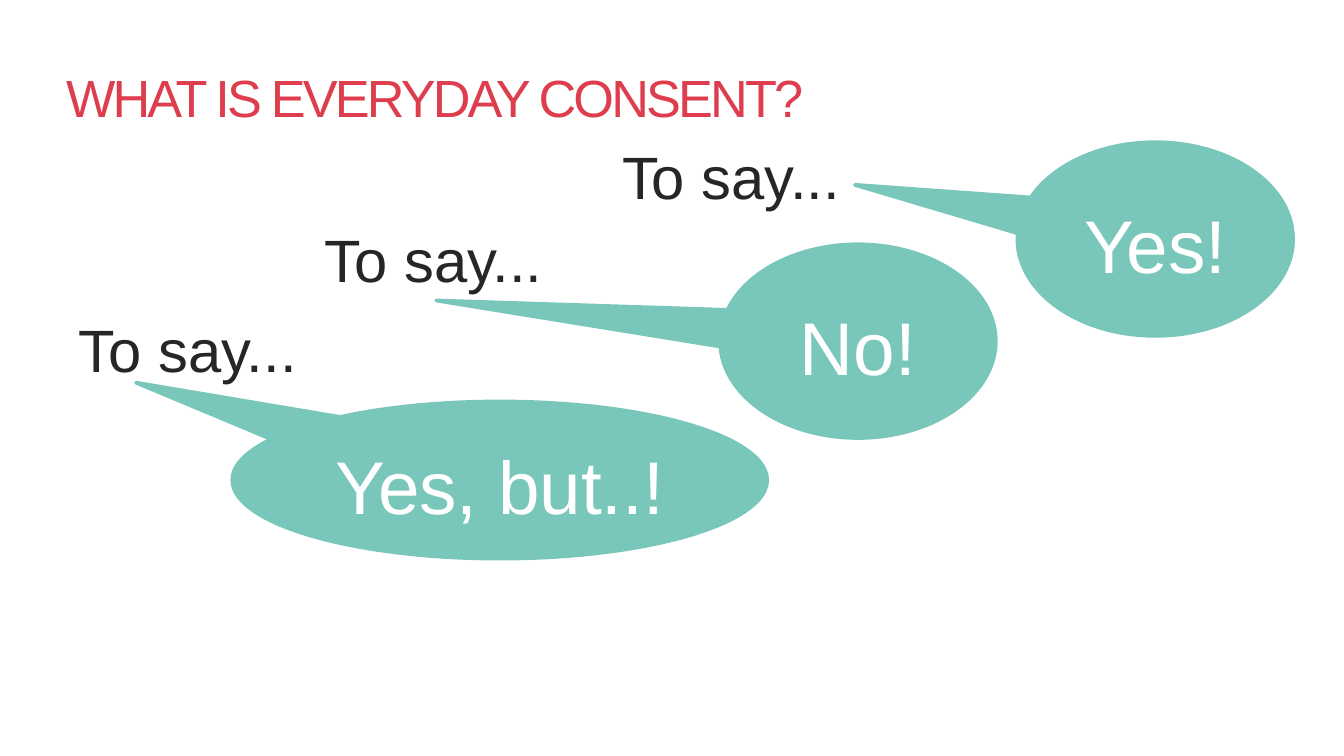
from dataclasses import dataclass
from typing import Any, NamedTuple

import pptx
import pptx.dml.color
import pptx.enum.shapes
import pptx.enum.text
import pptx.util

Cm = pptx.util.Cm
Pt = pptx.util.Pt
Align = pptx.enum.text.PP_ALIGN
Anchor = pptx.enum.text.MSO_ANCHOR


@dataclass(frozen=True)
class Theme:
    font: str = "Arial"
    title_color: str = "DD3D4C"
    prompt_color: str = "272626"
    bubble_color: str = "79C6BB"
    answer_color: str = "FFFFFF"
    title_size: int = 28
    prompt_size: int = 32
    answer_size: int = 40
    line_spacing: float = 1.1
    title_tracking: float = -1.5
    outline: int = 2


class Box(NamedTuple):
    """Left, top, width and height in centimetres."""
    left: float
    top: float
    width: float
    height: float

    def lengths(self) -> list[int]:
        return [Cm(value) for value in self]


@dataclass(frozen=True)
class Exchange:
    """A prompt and the speech bubble answering it."""
    answer: str
    bubble: Box
    tail: tuple[float, float]
    prompt: Box
    prompt_align: Any = Align.CENTER


THEME = Theme()
TITLE_BOX = Box(1, 0.99, 23.44, 1.45)
EXCHANGES = [
    Exchange("Yes!", Box(19.23, 2.69, 5.21, 3.66), (-1.09, -0.28),
             Box(9.25, 2.39, 9.14, 1.63)),
    Exchange("No!", Box(13.61, 4.62, 5.21, 3.66), (-1.53, -0.21),
             Box(3.63, 3.96, 9.14, 1.63)),
    Exchange("Yes, but..!", Box(4.39, 7.59, 10.11, 2.97), (-0.68, -0.62),
             Box(1.24, 5.66, 11.81, 1.63), Align.LEFT),
]


def rgb(value: str) -> pptx.dml.color.RGBColor:
    return pptx.dml.color.RGBColor.from_string(value)


def write_text(shape: Any, text: str, size: int, color: str,
               align: Any = Align.LEFT, anchor: Any = Anchor.TOP) -> Any:
    """Fill the shape with one styled paragraph and return its run."""
    frame = shape.text_frame
    frame.word_wrap = True
    frame.vertical_anchor = anchor
    paragraph = frame.paragraphs[0]
    paragraph.alignment = align
    paragraph.line_spacing = THEME.line_spacing
    run = paragraph.add_run()
    run.text = text
    for name, value in {"name": THEME.font, "size": Pt(size)}.items():
        setattr(run.font, name, value)
    run.font.color.rgb = rgb(color)
    return run


def add_title(slide: Any) -> None:
    title = slide.shapes.add_textbox(*TITLE_BOX.lengths())
    run = write_text(title, "WHAT IS EVERYDAY CONSENT?",
                     THEME.title_size, THEME.title_color)
    tracking = str(int(THEME.title_tracking * 100))
    run._r.get_or_add_rPr().set("spc", tracking)


def add_exchange(slide: Any, exchange: Exchange) -> None:
    group = slide.shapes.add_group_shape()
    bubble = group.shapes.add_shape(
        pptx.enum.shapes.MSO_SHAPE.OVAL_CALLOUT, *exchange.bubble.lengths())
    for index, offset in enumerate(exchange.tail):
        bubble.adjustments[index] = offset
    bubble.shadow.inherit = False
    bubble.fill.solid()
    bubble.fill.fore_color.rgb = rgb(THEME.bubble_color)
    bubble.line.color.rgb = rgb(THEME.bubble_color)
    bubble.line.width = Pt(THEME.outline)
    write_text(bubble, exchange.answer, THEME.answer_size,
               THEME.answer_color, Align.CENTER, Anchor.MIDDLE)

    prompt = group.shapes.add_textbox(*exchange.prompt.lengths())
    write_text(prompt, "To say...", THEME.prompt_size,
               THEME.prompt_color, exchange.prompt_align)


def main() -> None:
    presentation = pptx.Presentation()
    presentation.slide_width = Cm(25.4)
    presentation.slide_height = Cm(14.29)
    slide = presentation.slides.add_slide(presentation.slide_layouts[6])
    add_title(slide)
    for exchange in EXCHANGES:
        add_exchange(slide, exchange)
    presentation.save("out.pptx")


if __name__ == "__main__":
    main()
